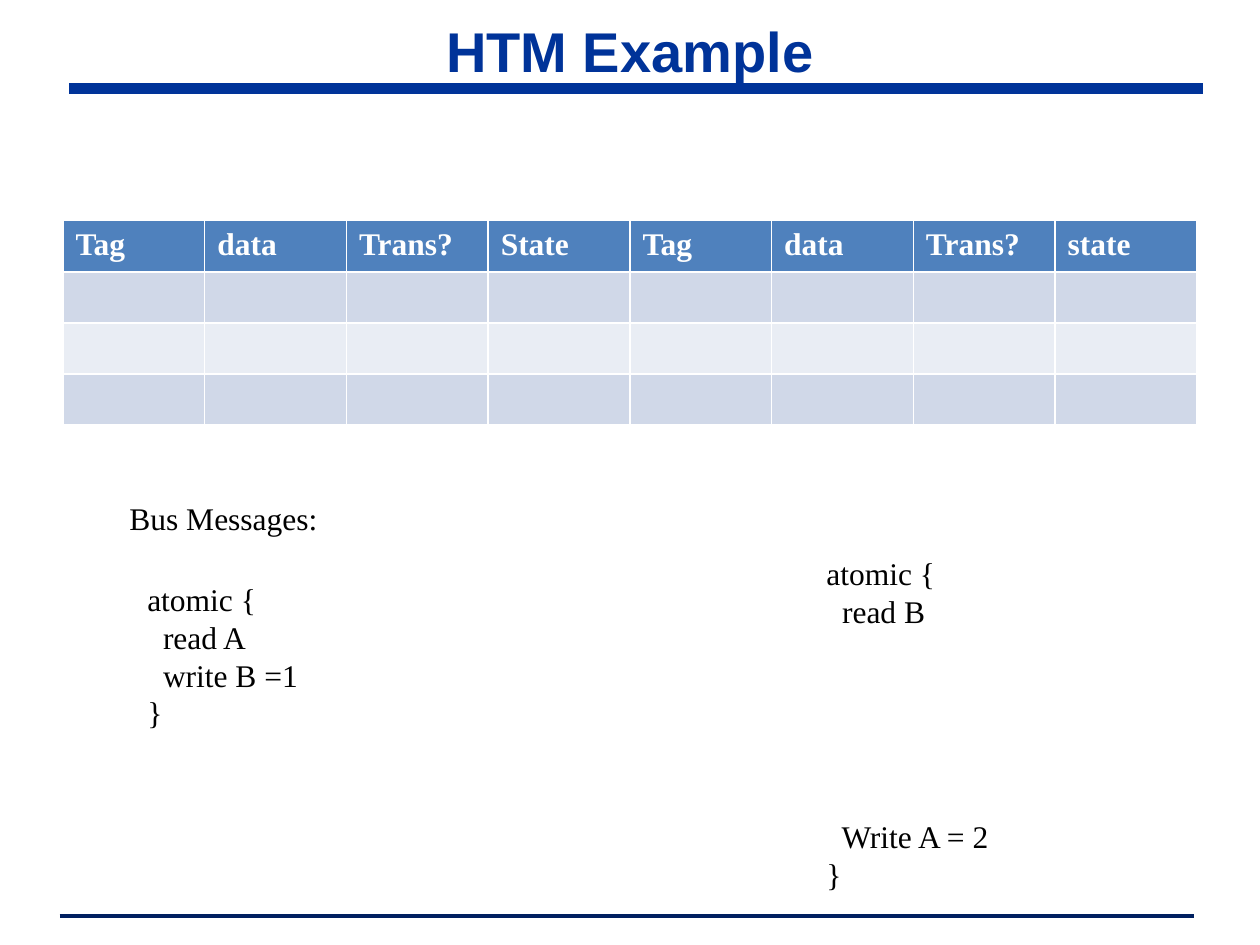
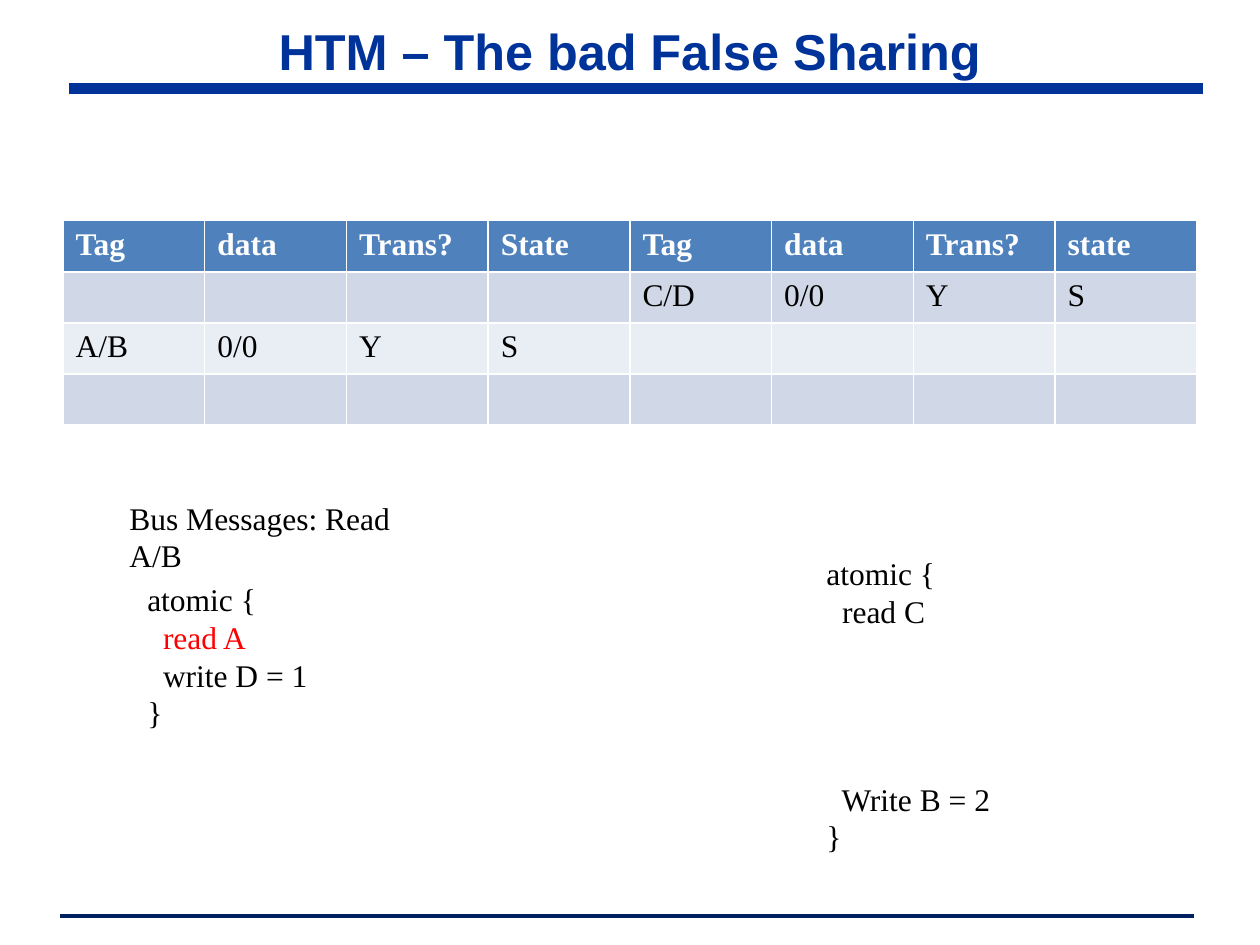
from lxml.etree import SubElement
from pptx import Presentation
from pptx.dml.color import RGBColor
from pptx.enum.shapes import MSO_CONNECTOR as Connector
from pptx.enum.text import MSO_ANCHOR as Anchor, MSO_AUTO_SIZE as AutoSize, PP_ALIGN as Align
from pptx.oxml.ns import qn
from pptx.util import Cm, Pt

COLORS = {
    "title": "003399",
    "footer": "002060",
    "header": "4F81BD",
    "band_dark": "D0D8E8",
    "band_light": "E9EDF4",
    "white": "FFFFFF",
    "text": "000000",
    "active": "FF0000",
}
BODY = {"name": "Times New Roman", "size": Pt(18), "bold": False}
HEADER = {**BODY, "bold": True}
LINE_PITCH = 21.5  # points
CACHE_COLUMNS = ["Tag", "data", "Trans?", "State", "Tag", "data", "Trans?", "state"]
CACHE_LINES = 3
TITLE_ONLY = 5


def color(name):
    return RGBColor.from_string(COLORS[name])


class DeckBuilder:
    def __init__(self):
        self.deck = Presentation()
        self.deck.slide_width, self.deck.slide_height = Cm(25.4), Cm(19.05)
        self.page = None

    def style(self, font, values, color_name):
        for name, value in values.items():
            setattr(font, name, value)
        font.color.rgb = color(color_name)

    def new_page(self, title, size):
        """Start a slide with its title and the two rules."""
        layout = self.deck.slide_layouts[TITLE_ONLY]
        self.page = self.deck.slides.add_slide(layout)
        self.rule(1.2, 18.47, "footer", 2.25)
        self.rule(1.4, 1.78, "title", 6)
        box = self.page.shapes.title
        place = {"left": Cm(1.27), "top": Cm(0.41), "width": Cm(22.86), "height": Cm(1.2)}
        for name, value in place.items():
            setattr(box, name, value)
        frame = box.text_frame
        frame.text = title
        frame.auto_size = AutoSize.NONE
        frame.vertical_anchor = Anchor.MIDDLE
        para = frame.paragraphs[0]
        para.alignment = Align.CENTER
        self.style(para.runs[0].font, {"name": "Arial", "size": Pt(size), "bold": True}, "title")

    def rule(self, left, top, color_name, weight):
        line = self.page.shapes.add_connector(
            Connector.STRAIGHT, Cm(left), Cm(top), Cm(left + 22.86), Cm(top))
        line.line.color.rgb = color(color_name)
        line.line.width = Pt(weight)
        SubElement(line._element.spPr, qn("a:effectLst"))

    def cache_table(self, entries):
        """Draw the cache lines; entries maps (row, first column) to cell values."""
        table = self.page.shapes.add_table(
            CACHE_LINES + 1, len(CACHE_COLUMNS), Cm(1.27), Cm(4.45), Cm(22.86), Cm(4.12)).table
        texts = {(0, column): text for column, text in enumerate(CACHE_COLUMNS)}
        for (row, first), values in entries.items():
            texts.update({(row, first + step): text for step, text in enumerate(values)})
        for row, cells in enumerate(table.rows):
            band = "header" if row == 0 else "band_dark" if row % 2 else "band_light"
            for column, cell in enumerate(cells.cells):
                cell.fill.solid()
                cell.fill.fore_color.rgb = color(band)
                para = cell.text_frame.paragraphs[0]
                if (row, column) in texts:
                    span = para.add_run()
                    span.text = texts[row, column]
                    self.style(span.font, BODY if row else HEADER, "text" if row else "white")
                else:
                    para.font.size = BODY["size"]

    def text(self, left, top, width, lines, active=None, gap_at=None, gap_lines=0):
        """Write lines, with one in the active colour and a gap before line gap_at."""
        height = Pt(LINE_PITCH * (len(lines) + gap_lines)) + Cm(0.25)
        box = self.page.shapes.add_textbox(Cm(left), Cm(top), Cm(width), height)
        frame = box.text_frame
        frame.word_wrap = True
        for index, line in enumerate(lines):
            para = frame.paragraphs[0] if index == 0 else frame.add_paragraph()
            para.line_spacing = Pt(LINE_PITCH)
            if index == gap_at:
                para.space_before = Pt(LINE_PITCH * gap_lines)
            span = para.add_run()
            span.text = line
            self.style(span.font, BODY, "active" if index == active else "text")

    def left_code(self, lines, active=None):
        self.text(2.72, 11.58, 6.07, lines, active)

    def right_code(self, lines, gap_lines):
        self.text(16.41, 11.05, 6.07, lines, gap_at=2, gap_lines=gap_lines)

    def bus_messages(self, message, width):
        self.text(2.36, 9.93, width, [message])


def main():
    builder = DeckBuilder()

    builder.new_page("HTM Example", 32)
    builder.cache_table({})
    builder.left_code(["atomic {", "  read A", "  write B =1", "}"])
    builder.right_code(["atomic {", "  read B", "  Write A = 2", "}"], gap_lines=5)
    builder.bus_messages("Bus Messages:", 4.4)

    builder.new_page("HTM – The bad False Sharing", 28.8)
    builder.cache_table({(1, 4): ["C/D", "0/0", "Y", "S"], (2, 0): ["A/B", "0/0", "Y", "S"]})
    builder.left_code(["atomic {", "  read A", "  write D = 1", "}"], active=1)
    builder.right_code(["atomic {", "  read C", "  Write B = 2", "}"], gap_lines=4)
    builder.bus_messages("Bus Messages: Read A/B", 6.6)

    builder.deck.save("out.pptx")


if __name__ == "__main__":
    main()
